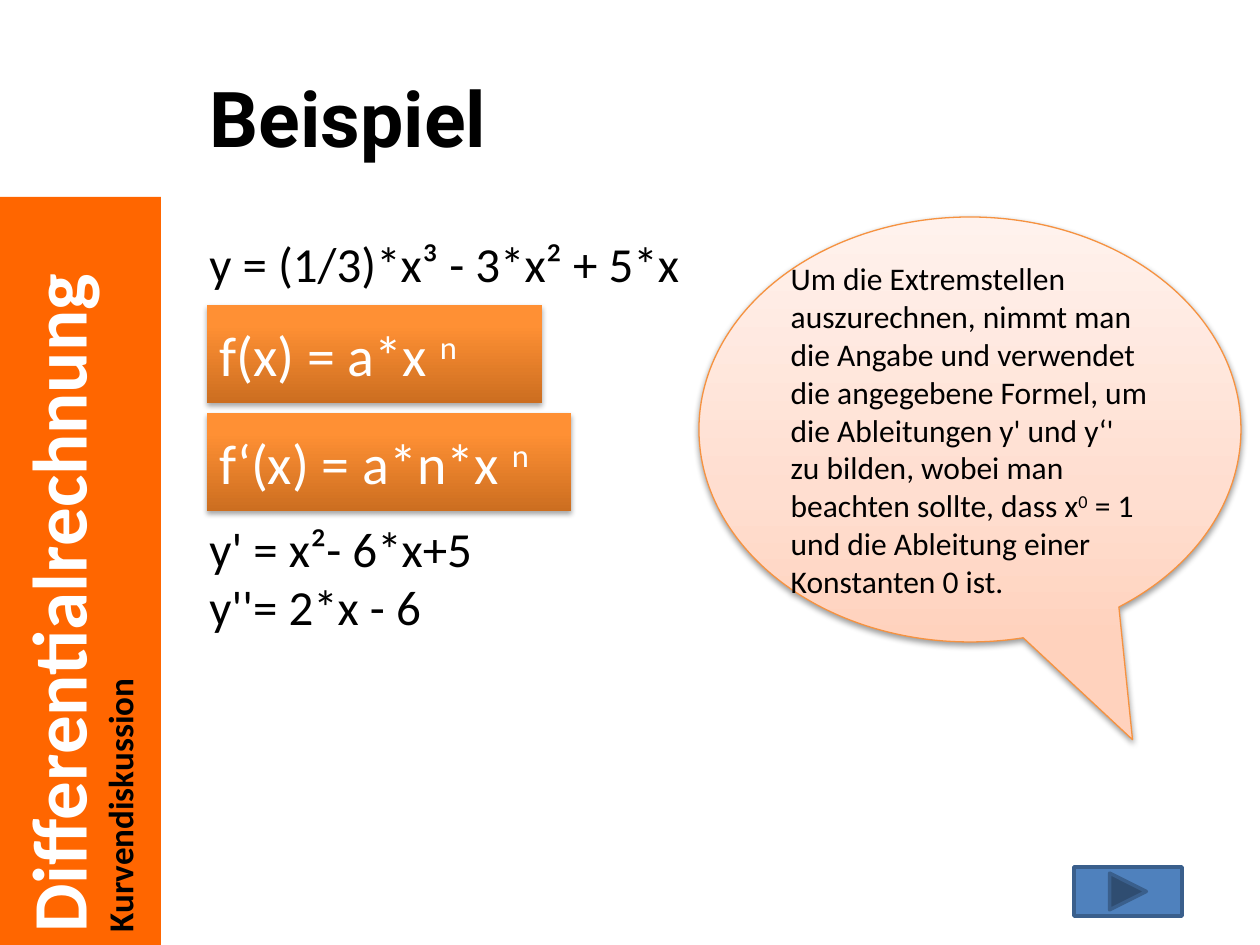
import copy

import pptx
import pptx.dml.color
import pptx.enum.shapes
import pptx.enum.text
import pptx.oxml
import pptx.oxml.ns
import pptx.util

RGB = pptx.dml.color.RGBColor
SHAPE = pptx.enum.shapes.MSO_SHAPE
ANCHOR = pptx.enum.text.MSO_ANCHOR
ALIGN = pptx.enum.text.PP_ALIGN

BLACK = RGB(0x00, 0x00, 0x00)
WHITE = RGB(0xFF, 0xFF, 0xFF)
ORANGE = RGB(0xFF, 0x66, 0x00)
CALLOUT_LINE = RGB(0xF6, 0x92, 0x40)
BUTTON_BLUE = RGB(0x4F, 0x81, 0xBD)
BUTTON_LINE = RGB(0x3A, 0x5F, 0x8C)
PEACH_STOPS = [(0, RGB(0xFF, 0xD2, 0xBD)), (0.35, RGB(0xFF, 0xDE, 0xD0)),
               (1, RGB(0xFF, 0xF2, 0xED))]
ORANGE_STOPS = [(0, RGB(0xCC, 0x6E, 0x20)), (0.8, RGB(0xFF, 0x90, 0x34)),
                (1, RGB(0xFF, 0x91, 0x36))]


class SlideBuilder:
    FONT = "Calibri"
    TITLE_FONT = "Roboto"
    PX = 914400 / 126

    def __init__(self, slide):
        self.slide = slide

    def box(self, *lengths):
        return [pptx.util.Emu(round(v * self.PX)) for v in lengths]

    def run(self, p, text, size, color, bold=False, font=FONT, raised=False):
        r = p.add_run()
        r.text = text
        r.font.name = font
        r.font.size = pptx.util.Pt(size)
        r.font.bold = bold
        r.font.color.rgb = color
        if raised:
            r.font._element.set("baseline", "30000")

    def title(self, text, *box):
        sp = self.slide.shapes.title
        sp.left, sp.top, sp.width, sp.height = self.box(*box)
        sp.text_frame.vertical_anchor = ANCHOR.MIDDLE
        p = sp.text_frame.paragraphs[0]
        p.alignment = ALIGN.LEFT
        self.run(p, text, 44, BLACK, True, self.TITLE_FONT)

    def text(self, lines, *box):
        sp = self.slide.shapes.add_textbox(*self.box(*box))
        tf = sp.text_frame
        tf.word_wrap = True
        for i, line in enumerate(lines):
            p = tf.add_paragraph() if i else tf.paragraphs[0]
            self.run(p, line, 28, BLACK)

    def shape(self, kind, *box, fill=None, line=None, width=1):
        sp = self.slide.shapes.add_shape(kind, *self.box(*box))
        sp.shadow.inherit = False
        if fill is not None:
            sp.fill.solid()
            sp.fill.fore_color.rgb = fill
        if line is None:
            sp.line.fill.background()
        else:
            sp.line.color.rgb = line
            sp.line.width = pptx.util.Pt(width)
        return sp

    def gradient(self, sp, stops):
        sp.fill.gradient()
        sp.fill.gradient_angle = 90
        gs_list = sp._element.spPr.find(".//" + pptx.oxml.ns.qn("a:gsLst"))
        gs_list.append(copy.deepcopy(gs_list[0]))
        for stop, (position, color) in zip(sp.fill.gradient_stops, stops):
            stop.position = position
            stop.color.rgb = color

    def shadow(self, sp, alpha, distance):
        effects = sp._element.spPr.find(pptx.oxml.ns.qn("a:effectLst"))
        effects.append(pptx.oxml.parse_xml(
            f'<a:outerShdw {pptx.oxml.ns.nsdecls("a")} blurRad="40000" '
            f'dist="{distance}" dir="5400000" rotWithShape="0">'
            f'<a:srgbClr val="000000"><a:alpha val="{alpha * 1000}"/>'
            '</a:srgbClr></a:outerShdw>'))

    def raised_text(self, sp, parts, size, color):
        """Fill a shape with text; every second part is superscript."""
        tf = sp.text_frame
        tf.word_wrap = True
        tf.vertical_anchor = ANCHOR.MIDDLE
        p = tf.paragraphs[0]
        p.alignment = ALIGN.LEFT
        for i, part in enumerate(parts):
            self.run(p, part, size, color, raised=i % 2 == 1)

    def formula(self, parts, *box):
        sp = self.shape(SHAPE.RECTANGLE, *box)
        self.gradient(sp, ORANGE_STOPS)
        self.shadow(sp, 35, 23000)
        self.raised_text(sp, parts, 32, WHITE)

    def callout(self, parts, *box):
        sp = self.shape(SHAPE.OVAL_CALLOUT, *box, line=CALLOUT_LINE, width=0.75)
        sp.adjustments[0], sp.adjustments[1] = 0.3, 0.73
        self.gradient(sp, PEACH_STOPS)
        self.shadow(sp, 38, 20000)
        self.raised_text(sp, parts, 18, BLACK)

    def sidebar(self, heading, topic, *box):
        sp = self.shape(SHAPE.RECTANGLE, *box, fill=ORANGE)
        tf = sp.text_frame
        tf.word_wrap = True
        tf.vertical_anchor = ANCHOR.MIDDLE
        tf._txBody.bodyPr.set("vert", "vert270")
        lines = [(heading, 44, WHITE), (topic, 20, BLACK)]
        for i, (text, size, color) in enumerate(lines):
            p = tf.add_paragraph() if i else tf.paragraphs[0]
            p.alignment = ALIGN.LEFT
            p.line_spacing = 0.9
            self.run(p, text, size, color, bold=True)


def main():
    prs = pptx.Presentation()
    prs.slide_width = pptx.util.Inches(10)
    prs.slide_height = pptx.util.Inches(7.5)
    s = SlideBuilder(prs.slides.add_slide(prs.slide_layouts[5]))

    # Sidebar and title
    s.sidebar("Differentialrechnung", "Kurvendiskussion", 0, 197, 161, 748)
    s.title("Beispiel", 197, 38, 1000, 158)

    # Explanation
    s.callout(["Um die Extremstellen auszurechnen, nimmt man die Angabe und "
               "verwendet die angegebene Formel, um die Ableitungen y' und y‘' "
               "zu bilden, wobei man beachten sollte, dass x", "0",
               " = 1 und die Ableitung einer Konstanten 0 ist."],
              699, 217, 542, 425)

    # Function, rules and derivatives
    s.text(["y = (1/3)*x³ - 3*x² + 5*x"], 197, 227, 601, 131)
    s.formula(["f(x) = a*x ", "n"], 207, 305, 335, 98)
    s.formula(["f‘(x) = a*n*x ", "n"], 207, 413, 364, 98)
    s.text(["y' = x²- 6*x+5", "y''= 2*x - 6"], 197, 512, 601, 190)

    # Forward button
    s.shape(SHAPE.ACTION_BUTTON_FORWARD_OR_NEXT, 1074, 867, 108, 49,
            fill=BUTTON_BLUE, line=BUTTON_LINE, width=2)

    prs.save("out.pptx")


if __name__ == "__main__":
    main()
